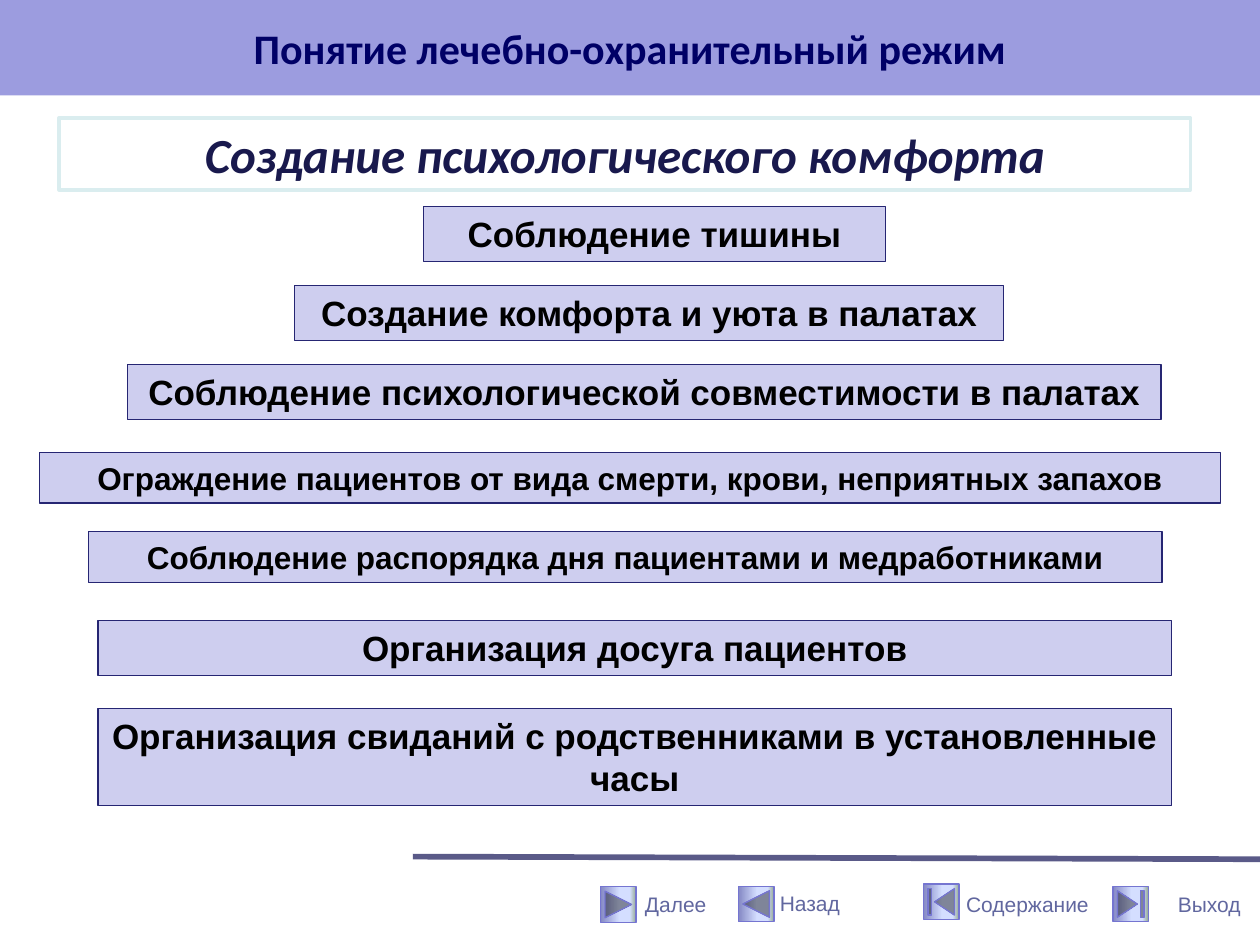
import copy
import pptx
import pptx.util
import pptx.dml.color
import pptx.enum.shapes
import pptx.enum.text
import pptx.oxml
import pptx.oxml.ns

Pt = pptx.util.Pt
Kind = pptx.enum.shapes.MSO_SHAPE
Align = pptx.enum.text.PP_ALIGN
Anchor = pptx.enum.text.MSO_ANCHOR
Size = pptx.enum.text.MSO_AUTO_SIZE
qn = pptx.oxml.ns.qn

TITLE = "Понятие лечебно-охранительный режим"
HEAD = "Создание психологического комфорта"
BARS = [
    ("Соблюдение тишины", 242, 118, 264, 31.5, 20),
    ("Создание комфорта и уюта в палатах", 168.5, 163.25, 405, 31.5, 20),
    ("Соблюдение психологической совместимости в палатах", 73, 208.25, 590.5, 31.5, 20),
    ("Ограждение пациентов от вида смерти, крови, неприятных запахов", 22.5, 258.5, 675, 29, 18),
    ("Соблюдение распорядка дня пациентами и медработниками", 50.5, 303.75, 613.5, 29, 18),
    ("Организация досуга пациентов", 56, 354.5, 613.5, 31.5, 20),
    ("Организация свиданий с родственниками в установленные часы", 56, 405, 613.5, 55.5, 20),
]
KEYS = [
    ("Далее", Kind.ACTION_BUTTON_FORWARD_OR_NEXT, 343.25, 506.75, (361.5, 505.75, 49.5, 21.5)),
    ("Назад", Kind.ACTION_BUTTON_BACK_OR_PREVIOUS, 422, 506.5, (438.5, 505.25, 49, 21.5)),
    ("Содержание", Kind.ACTION_BUTTON_BEGINNING, 527.75, 505.25, (545, 506, 85, 21.5)),
    ("Выход", Kind.ACTION_BUTTON_END, 636, 506.5, (666, 498.5, 54, 36)),
]
KEY = 20.25
STOPS = [(0, "8488C4"), (0.53, "D4DEFF"), (0.83, "D4DEFF"), (1, "96AB94")]


def tint(code):
    return pptx.dml.color.RGBColor.from_string(code)


def write(shape, text, font, size, color, bold=False, italic=False,
          align=Align.CENTER, anchor=Anchor.TOP, wrap=True):
    frame = shape.text_frame
    frame.word_wrap = wrap
    frame.auto_size = Size.NONE
    frame.vertical_anchor = anchor
    para = frame.paragraphs[0]
    para.text = text
    para.alignment = align
    para.font.name = font
    para.font.size = Pt(size)
    para.font.bold = bold
    para.font.italic = italic
    para.font.color.rgb = tint(color)


def shape_at(slide, kind, box, line=None, width=0.75):
    shape = slide.shapes.add_shape(kind, *map(Pt, box))
    shape.shadow.inherit = False
    if line:
        shape.line.color.rgb = tint(line)
        shape.line.width = Pt(width)
    else:
        shape.line.fill.background()
    return shape


def rect(slide, box, fill, line=None, width=0.75):
    shape = shape_at(slide, Kind.RECTANGLE, box, line, width)
    shape.fill.solid()
    shape.fill.fore_color.rgb = tint(fill)
    return shape


def shade(shape):
    shape.fill.gradient()
    shape.fill.gradient_angle = 0
    stops = shape.element.spPr.find(qn("a:gradFill")).find(qn("a:gsLst"))
    while len(stops) < len(STOPS):
        stops.append(copy.deepcopy(stops[0]))
    for stop, (place, color) in zip(shape.fill.gradient_stops, STOPS):
        stop.position = place
        stop.color.rgb = tint(color)


def main():
    deck = pptx.Presentation()
    deck.slide_width, deck.slide_height = Pt(720), Pt(540)
    slide = deck.slides.add_slide(deck.slide_layouts[6])

    rule = slide.shapes.add_connector(
        pptx.enum.shapes.MSO_CONNECTOR.STRAIGHT, Pt(236), Pt(489.5), Pt(720), Pt(491))
    rule.line.color.rgb = tint("5A5A88")
    rule.line.width = Pt(3.25)
    rule.element.spPr.append(pptx.oxml.parse_xml(
        '<a:effectLst xmlns:a="http://schemas.openxmlformats.org/drawingml/2006/main"/>'))

    for text, kind, left, top, box in KEYS:
        shade(shape_at(slide, kind, (left, top, KEY, KEY), "7575D1"))
        label = slide.shapes.add_textbox(*map(Pt, box))
        write(label, text, "Arial", 12, "61679F", align=Align.LEFT,
              anchor=Anchor.MIDDLE, wrap=False)

    title = rect(slide, (0, 0, 720, 54.5), "9C9CDF")
    write(title, TITLE, "Calibri", 24, "000066", True, anchor=Anchor.MIDDLE)
    head = rect(slide, (33.75, 67.5, 646.5, 41), "FFFFFF", "DAEDEF", 2)
    write(head, HEAD, "Calibri", 28, "19194D", True, True, anchor=Anchor.MIDDLE)
    for text, *box, size in BARS:
        bar = rect(slide, box, "CECEEF", "262673")
        write(bar, text, "Arial", size, "000000", True)

    deck.save("out.pptx")


if __name__ == "__main__":
    main()
